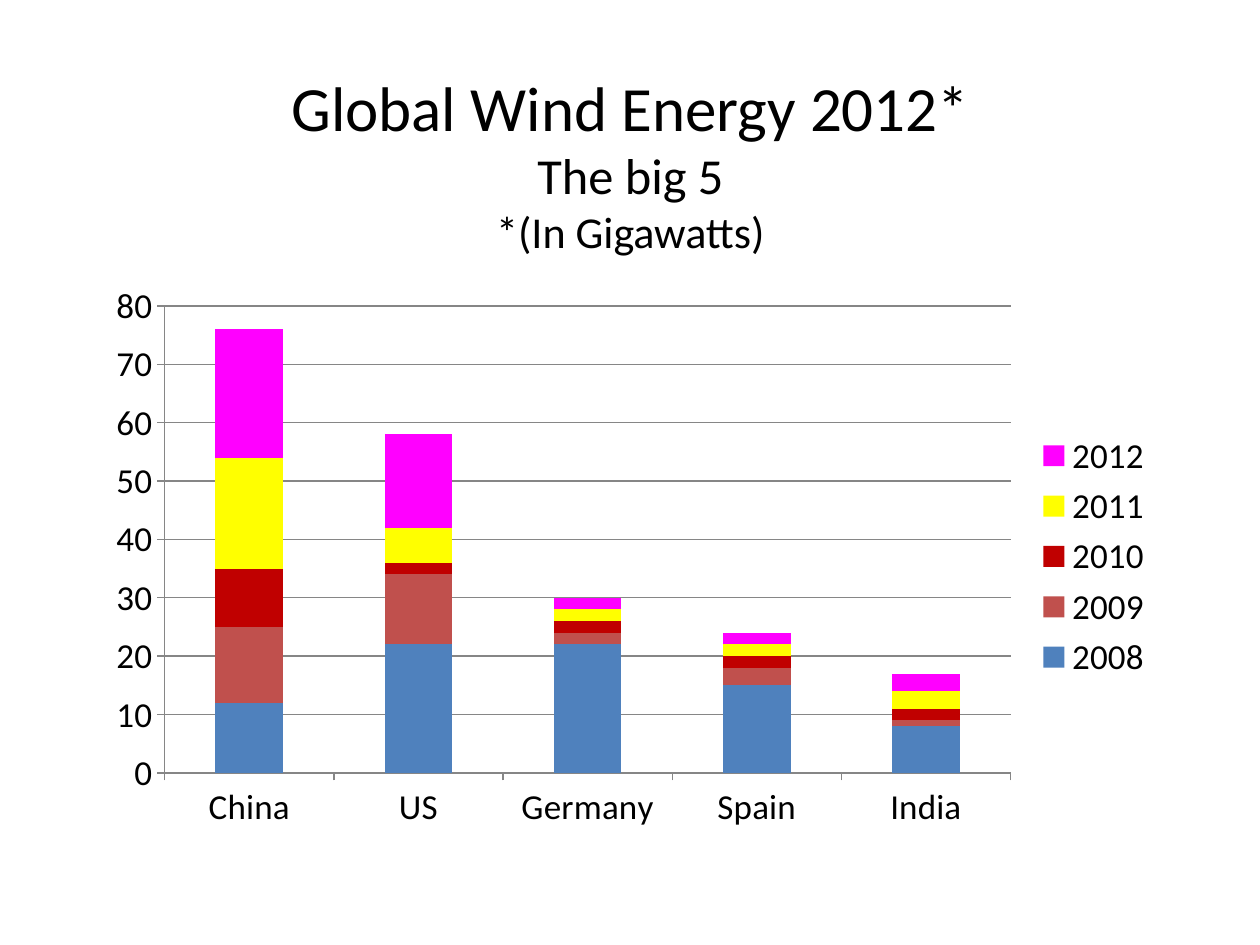
from pptx import Presentation
from pptx.chart.data import CategoryChartData
from pptx.dml.color import RGBColor
from pptx.enum.chart import XL_CHART_TYPE, XL_LEGEND_POSITION, XL_TICK_MARK
from pptx.enum.text import MSO_ANCHOR, MSO_AUTO_SIZE, PP_ALIGN
from pptx.util import Emu, Pt

PX = 914400 // 126
FONT = "Calibri"

TITLE_LINES = [
    ("Global Wind Energy 2012*", 36),
    ("The big 5", 28.8),
    ("*(In Gigawatts)", 25.2),
]
COUNTRIES = ["China", "US", "Germany", "Spain", "India"]
YEARS = [
    ("2008", "4F81BD", [12, 22, 22, 15, 8]),
    ("2009", "C0504D", [13, 12, 2, 3, 1]),
    ("2010", "C00000", [10, 2, 2, 2, 2]),
    ("2011", "FFFF00", [19, 6, 2, 2, 3]),
    ("2012", "FF00FF", [22, 16, 2, 2, 3]),
]


def px(*lengths):
    return [Emu(n * PX) for n in lengths]


def color(hex_string):
    return RGBColor.from_string(hex_string)


def style_font(font, size):
    font.name = FONT
    font.size = Pt(size)
    font.color.rgb = color("000000")


def style_line(line):
    line.color.rgb = color("868686")
    line.width = Pt(0.75)


def add_title(s, box):
    sp = s.shapes.title
    sp.left, sp.top, sp.width, sp.height = px(*box)
    tf = sp.text_frame
    tf.word_wrap = True
    tf.auto_size = MSO_AUTO_SIZE.NONE
    tf.vertical_anchor = MSO_ANCHOR.MIDDLE
    p = tf.paragraphs[0]
    p.alignment = PP_ALIGN.CENTER
    for i, (text, size) in enumerate(TITLE_LINES):
        if i:
            p.add_line_break()
        r = p.add_run()
        r.text = text
        style_font(r.font, size)


def add_energy_chart(s, box):
    data = CategoryChartData()
    data.categories = COUNTRIES
    for year, _, gigawatts in YEARS:
        data.add_series(year, gigawatts)
    chart = s.shapes.add_chart(XL_CHART_TYPE.COLUMN_STACKED, *px(*box), data).chart
    chart.has_title = False
    style_font(chart.font, 20)

    # Stacked columns, one colour per year
    plot = chart.plots[0]
    plot.gap_width = 150
    plot.overlap = 100
    plot.vary_by_categories = False
    for series, (_, fill, _) in zip(plot.series, YEARS):
        series.format.fill.solid()
        series.format.fill.fore_color.rgb = color(fill)

    # Axes and gridlines
    value_axis = chart.value_axis
    value_axis.minimum_scale = 0
    value_axis.maximum_scale = 80
    value_axis.major_unit = 10
    value_axis.has_major_gridlines = True
    style_line(value_axis.major_gridlines.format.line)
    for axis in (chart.category_axis, value_axis):
        axis.major_tick_mark = XL_TICK_MARK.OUTSIDE
        style_line(axis.format.line)

    # Legend
    chart.has_legend = True
    chart.legend.position = XL_LEGEND_POSITION.RIGHT
    chart.legend.include_in_layout = False


def main():
    prs = Presentation()
    prs.slide_width, prs.slide_height = px(1260, 945)
    s = prs.slides.add_slide(prs.slide_layouts[5])
    add_title(s, (95, 84, 1071, 158))
    add_energy_chart(s, (95, 273, 1071, 567))
    prs.save("out.pptx")


if __name__ == "__main__":
    main()
